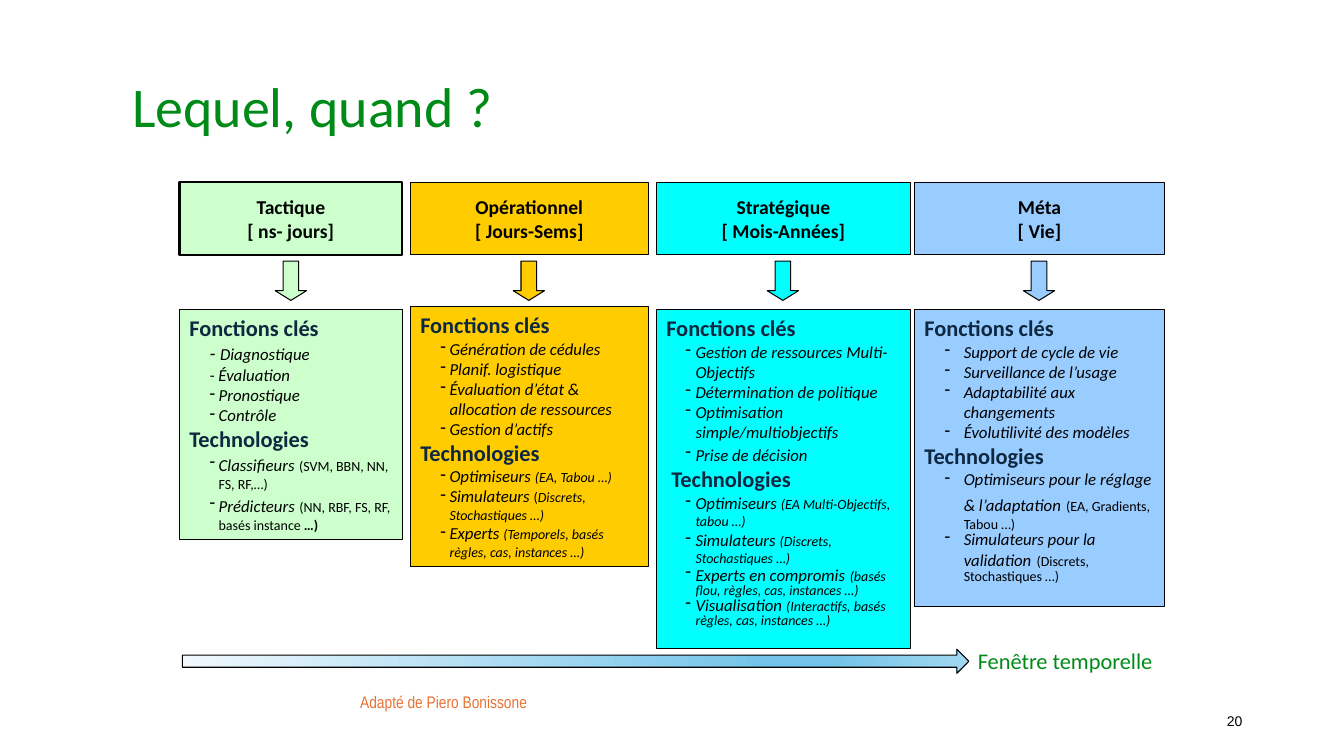
from dataclasses import dataclass

from pptx import Presentation
from pptx.dml.color import RGBColor
from pptx.enum.shapes import MSO_SHAPE as Shape
from pptx.enum.text import MSO_ANCHOR as Anchor, PP_ALIGN as Align
from pptx.oxml import parse_xml
from pptx.oxml.ns import nsdecls, qn
from pptx.util import Pt

EMU_PER_PX = 9144
GREEN, NAVY, BLACK, ORANGE = "008A17", "0E2841", "000000", "E97132"
KEY, TECH = "Fonctions clés", "Technologies"
HEADER_TOP, HEADER_HEIGHT = 181, 72
ARROW_TOP, ARROW_WIDTH, ARROW_HEIGHT = 259, 31, 39
TIME_STOPS = [(0, "F0F8FD"), (74, "74C4E9"), (83, "74C4E9"), (100, "A2D8F0")]


@dataclass
class Item:
    """A list entry made of (text, size, style) runs."""
    runs: list
    spacing: float = None
    bullet: bool = True


@dataclass
class Column:
    """One time horizon with its place, colour and content."""
    left: int
    width: int
    body_top: int
    body_height: int
    fill: str
    header: str
    content: list
    hang: tuple = (29, 9)
    border: float = 0.75


def simple(text):
    """Return an entry in one italic run."""
    return Item([(text, 12, "i")])


def detailed(name, detail):
    """Return an entry with a smaller italic detail."""
    return Item([(name + " ", 12, "i"), (detail, 10, "i")])


COLUMNS = [
    Column(178, 221, 307, 228, "CCFFCC", "Tactique\n[ ns- jours]", [
        KEY,
        Item([("- ", 14, "i"), ("Diagnostique", 12, "i")], bullet=False),
        Item([("- Évaluation", 12, "i")], bullet=False),
        simple("Pronostique"),
        simple("Contrôle"),
        TECH,
        Item([("Classifieurs", 12, "i"), (" ", 14, "bi"),
              ("(SVM, BBN, NN, FS, RF,…)", 10, "")]),
        Item([("Prédicteurs", 12, "i"), (" ", 14, "bi"),
              ("(NN, RBF, FS, RF, basés instance", 10, ""), (" …)", 10, "b")]),
    ], border=1.5),
    Column(407, 236, 304, 258, "FFCC00", "Opérationnel\n[ Jours-Sems]", [
        KEY,
        simple("Génération de cédules"),
        simple("Planif. logistique"),
        simple("Évaluation d’état & allocation de ressources"),
        simple("Gestion d’actifs"),
        TECH,
        detailed("Optimiseurs", "(EA, Tabou …)"),
        Item([("Simulateurs ", 12, "i"), ("(", 10, ""),
              ("Discrets, Stochastiques …)", 10, "i")]),
        detailed("Experts", "(Temporels, basés règles, cas, instances …)"),
    ]),
    Column(651, 252, 307, 336, "00FFFF", "Stratégique\n[ Mois-Années]", [
        KEY,
        simple("Gestion de ressources Multi-Objectifs"),
        simple("Détermination de politique"),
        simple("Optimisation simple/multiobjectifs"),
        Item([("Prise de décision", 12, "i"), (" ", 14, "i")]),
        " " + TECH,
        detailed("Optimiseurs", "(EA Multi-Objectifs, tabou …)"),
        detailed("Simulateurs", "(Discrets, Stochastiques …)"),
        Item([("Experts en compromis", 12, "i"), (" ", 14, "bi"),
              ("(basés flou, règles, cas, instances …)", 10, "i")], 0.8),
        Item([("Visualisation ", 12, "i"),
              ("(Interactifs, basés règles, cas, instances …)", 10, "i")], 0.8),
    ], hang=(29, 10)),
    Column(907, 248, 307, 295, "99CCFF", "Méta\n[ Vie]", [
        KEY,
        simple("Support de cycle de vie"),
        simple("Surveillance de l’usage"),
        simple("Adaptabilité aux changements"),
        simple("Évolutilivité des modèles"),
        TECH,
        Item([("Optimiseurs pour le réglage & l’adaptation", 12, "i"), (" ", 16, "bi"),
              ("(EA, Gradients, Tabou …)", 10, "")]),
        Item([("Simulateurs pour la validation", 12, "i"), (" ", 16, "bi"),
              ("(Discrets, Stochastiques …)", 10, "")], 0.8),
    ], hang=(39, 19)),
]


def px(length):
    """Turn pixels into EMU."""
    return length * EMU_PER_PX


def rgb(code):
    """Turn a hex string into a colour."""
    return RGBColor.from_string(code)


def style_run(run, size, color, style="", font="Calibri"):
    """Format one run; style may hold b and i."""
    run.font.name, run.font.size = font, Pt(size)
    run.font.bold, run.font.italic = "b" in style, "i" in style
    run.font.color.rgb = rgb(color)


def add_block(slide, kind, box, fill=None, border=0.75):
    """Add an outlined preset shape, filled when a colour is given."""
    block = slide.shapes.add_shape(kind, *map(px, box))
    block.shadow.inherit = False
    if fill:
        block.fill.solid()
        block.fill.fore_color.rgb = rgb(fill)
    block.line.color.rgb = rgb(BLACK)
    block.line.width = Pt(border)
    return block


def add_label(slide, box, text, size, color, align=Align.LEFT, anchor=Anchor.TOP,
              font="Calibri", spacing=None, wrap=False, inset=None):
    """Add a one-line text box."""
    label = slide.shapes.add_textbox(*map(px, box))
    frame = label.text_frame
    frame.text, frame.word_wrap, frame.vertical_anchor = text, wrap, anchor
    if inset is not None:
        frame.margin_left = frame.margin_right = px(inset)
        frame.margin_top = frame.margin_bottom = px(inset)
    line = frame.paragraphs[0]
    line.alignment, line.line_spacing = align, spacing
    style_run(line.runs[0], size, color, font=font)


def add_item(paragraph, item, hang):
    """Write a hanging list entry into a paragraph."""
    margin, indent = hang
    props = paragraph._p.get_or_add_pPr()
    props.set("marL", str(px(margin)))
    props.set("indent", str(-px(indent)))
    paragraph.level = 1
    paragraph.line_spacing = item.spacing
    if item.bullet:
        props.append(parse_xml(f'<a:buChar {nsdecls("a")} char="-"/>'))
    for text, size, style in item.runs:
        run = paragraph.add_run()
        run.text = text
        style_run(run, size, BLACK, style)


def add_column(slide, column):
    """Draw the header, arrow and content box of one time horizon."""
    left, width = column.left, column.width
    header = add_block(slide, Shape.RECTANGLE, (left, HEADER_TOP, width, HEADER_HEIGHT),
                       column.fill, column.border).text_frame
    header.text, header.word_wrap = column.header, False
    header.vertical_anchor = Anchor.MIDDLE
    for line in header.paragraphs:
        line.alignment = Align.CENTER
        style_run(line.runs[0], 14, BLACK, "b")

    arrow_left = left + (width - ARROW_WIDTH) // 2
    arrow = add_block(slide, Shape.DOWN_ARROW,
                      (arrow_left, ARROW_TOP, ARROW_WIDTH, ARROW_HEIGHT), column.fill)
    arrow.adjustments[1] = 0.31

    body = add_block(slide, Shape.RECTANGLE,
                     (left, column.body_top, width, column.body_height), column.fill).text_frame
    body.word_wrap, body.vertical_anchor = True, Anchor.TOP
    for index, entry in enumerate(column.content):
        paragraph = body.add_paragraph() if index else body.paragraphs[0]
        paragraph.alignment = Align.LEFT
        if isinstance(entry, Item):
            add_item(paragraph, entry, column.hang)
        else:
            paragraph.text = entry
            style_run(paragraph.runs[0], 16, NAVY, "b")


def add_timeline(slide, left, top, width, height):
    """Draw the gradient time arrow and its caption."""
    arrow = add_block(slide, Shape.RIGHT_ARROW, (left, top, width, height))
    stops = "".join(f'<a:gs pos="{pos * 1000}"><a:srgbClr val="{color}"/></a:gs>'
                    for pos, color in TIME_STOPS)
    gradient = parse_xml(f'<a:gradFill {nsdecls("a")}><a:gsLst>{stops}</a:gsLst>'
                         '<a:lin ang="0" scaled="0"/></a:gradFill>')
    arrow._element.spPr.find(qn("a:prstGeom")).addnext(gradient)
    add_label(slide, (left + width - 1, top - 7, 194, 37), "Fenêtre temporelle", 16, GREEN)


def main():
    """Build and save the slide."""
    deck = Presentation()
    deck.slide_width, deck.slide_height = px(1333), px(750)
    slide = deck.slides.add_slide(deck.slide_layouts[6])
    add_label(slide, (131, 76, 874, 63), "Lequel, quand ?", 40, GREEN,
              anchor=Anchor.BOTTOM, spacing=0.9, wrap=True, inset=0)
    for column in COLUMNS:
        add_column(slide, column)
    add_timeline(slide, 181, 644, 780, 24)
    add_label(slide, (347, 684, 186, 28), "Adapté de Piero Bonissone", 12, ORANGE,
              Align.CENTER, font="Arial Narrow", spacing=0.9)
    add_label(slide, (942, 695, 300, 40), "20", 10, BLACK, Align.RIGHT,
              Anchor.MIDDLE, "Arial", wrap=True)
    deck.save("out.pptx")


if __name__ == "__main__":
    main()
